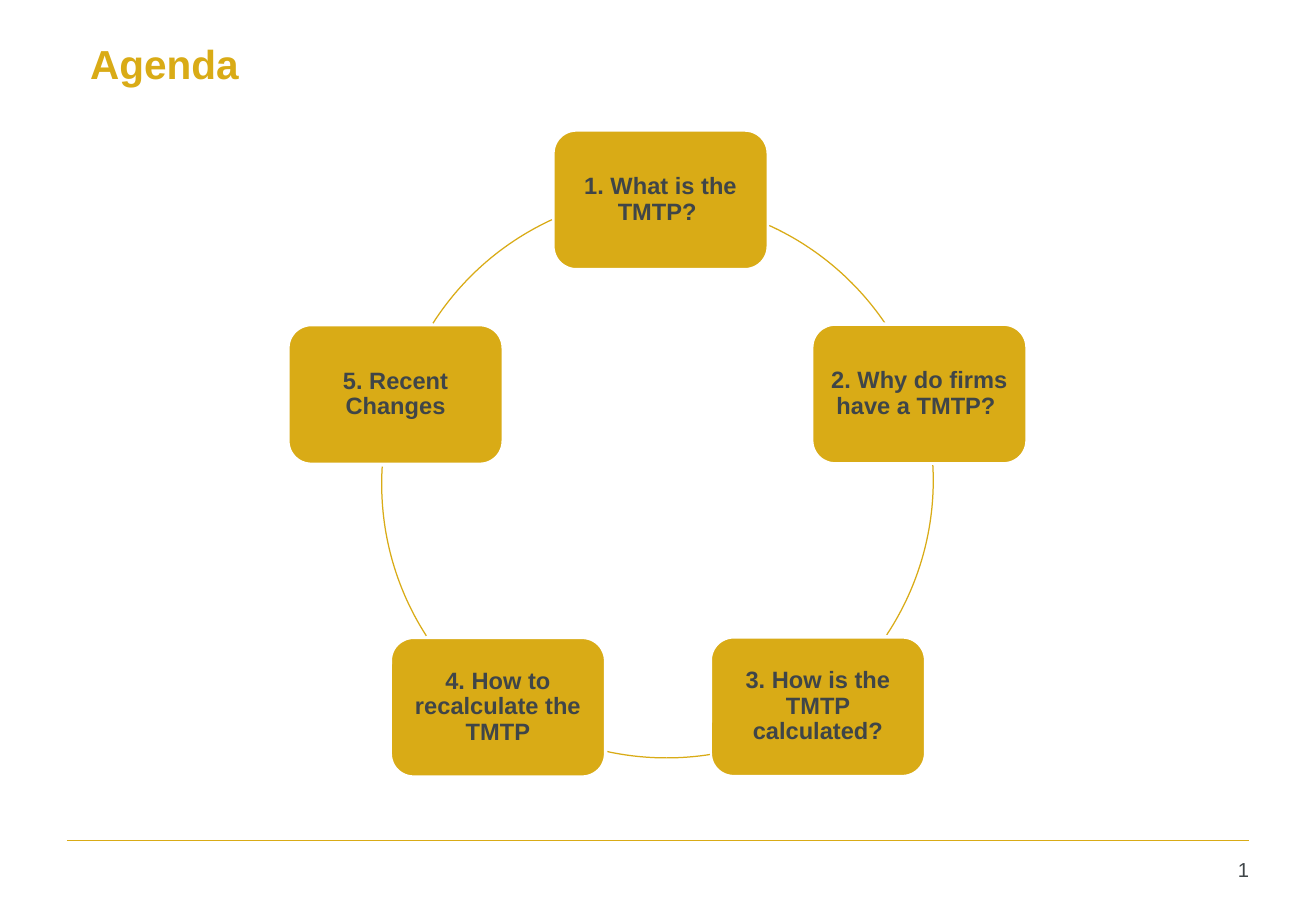
from lxml.etree import SubElement
from pptx import Presentation
from pptx.dml.color import RGBColor
from pptx.enum.shapes import MSO_CONNECTOR as Connector, MSO_SHAPE as Shape
from pptx.enum.text import MSO_ANCHOR as Anchor, PP_ALIGN as Align
from pptx.oxml.ns import qn
from pptx.util import Cm, Pt

GOLD = RGBColor(0xD9, 0xAB, 0x16)
GREY = RGBColor(0x3F, 0x45, 0x48)
WHITE = RGBColor(0xFF, 0xFF, 0xFF)

BOX_WIDTH, BOX_HEIGHT = Cm(4.5), Cm(2.92)
CIRCLE = Cm(11.71)

# Text, left and top of each box in cm
TOPICS = [
    ("1. What is the TMTP? ", 11.56, 2.72),
    ("2. Why do firms have a TMTP? ", 16.97, 6.78),
    ("3. How is the TMTP calculated?", 14.85, 13.32),
    ("4. How to recalculate the TMTP", 8.16, 13.33),
    ("5. Recent Changes", 6.02, 6.79),
]
# Left and top of each circle in cm, start and end angle in degrees
ARCS = [
    (7.8, 4.19, 294.5, 325.8),
    (7.8, 4.19, 356.9, 33.5),
    (8.08, 4.14, 81.1, 102.4),
    (7.98, 4.27, 147.2, 183.6),
    (8.13, 4.06, 212.6, 245.3),
]


def set_all(target, values):
    for name, value in values.items():
        setattr(target, name, value)


def write(shape, text, size, color, bold, align, frame_format):
    frame = shape.text_frame
    set_all(frame, {"word_wrap": True, **frame_format})
    paragraph = frame.paragraphs[0]
    paragraph.alignment = align
    run = paragraph.add_run()
    run.text = text
    set_all(run.font, {"name": "Arial", "size": Pt(size), "bold": bold})
    run.font.color.rgb = color
    return paragraph


def add_title(slide, text):
    title = slide.shapes.title
    set_all(title, {"left": Cm(1.63), "top": Cm(-0.08),
                    "width": Cm(21.92), "height": Cm(2.8)})
    write(title, text, 24, GOLD, True, Align.LEFT,
          {"vertical_anchor": Anchor.MIDDLE})


def add_footer(slide, number):
    line = slide.shapes.add_connector(
        Connector.STRAIGHT, Cm(1.4), Cm(17.58), Cm(26.11), Cm(17.58))
    line.line.color.rgb = GOLD
    line.line.width = Pt(1)
    SubElement(line._element.spPr, qn("a:effectLst"))

    box = slide.shapes.add_textbox(Cm(13.36), Cm(17.81), Cm(13), Cm(0.91))
    paragraph = write(box, number, 12, GREY, False, Align.RIGHT, {})
    # Turn the run into a slide number field
    run = paragraph.runs[0]._r
    field = SubElement(paragraph._p, qn("a:fld"), type="slidenum",
                       id="{B6F15528-21DE-4FAA-801E-634DDDAF4B2B}")
    field.extend(list(run))
    paragraph._p.remove(run)


def add_topic(slide, text, left, top):
    box = slide.shapes.add_shape(
        Shape.ROUNDED_RECTANGLE, Cm(left), Cm(top), BOX_WIDTH, BOX_HEIGHT)
    box.shadow.inherit = False
    box.fill.solid()
    box.fill.fore_color.rgb = GOLD
    box.line.color.rgb = WHITE
    box.line.width = Pt(2)
    sides = ("left", "top", "right", "bottom")
    insets = {f"margin_{side}": Cm(0.15) for side in sides}
    paragraph = write(box, text, 14, GREY, True, Align.CENTER,
                      {"vertical_anchor": Anchor.MIDDLE, **insets})
    paragraph.line_spacing = 0.9


def add_arc(slide, left, top, start, end):
    arc = slide.shapes.add_shape(Shape.ARC, Cm(left), Cm(top), CIRCLE, CIRCLE)
    arc.shadow.inherit = False
    arc.fill.background()
    arc.line.color.rgb = GOLD
    arc.line.width = Pt(0.75)
    # One degree is 60000 units, one adjustment is 100000
    for index, angle in enumerate((start, end)):
        arc.adjustments[index] = angle * 0.6


def main():
    presentation = Presentation()
    set_all(presentation, {"slide_width": Cm(27.51), "slide_height": Cm(19.05)})
    slide = presentation.slides.add_slide(presentation.slide_layouts[5])

    add_title(slide, "Agenda")
    add_footer(slide, "2")

    # Cycle of topics
    for topic, arc in zip(TOPICS, ARCS):
        add_topic(slide, *topic)
        add_arc(slide, *arc)

    presentation.save("out.pptx")


if __name__ == "__main__":
    main()
